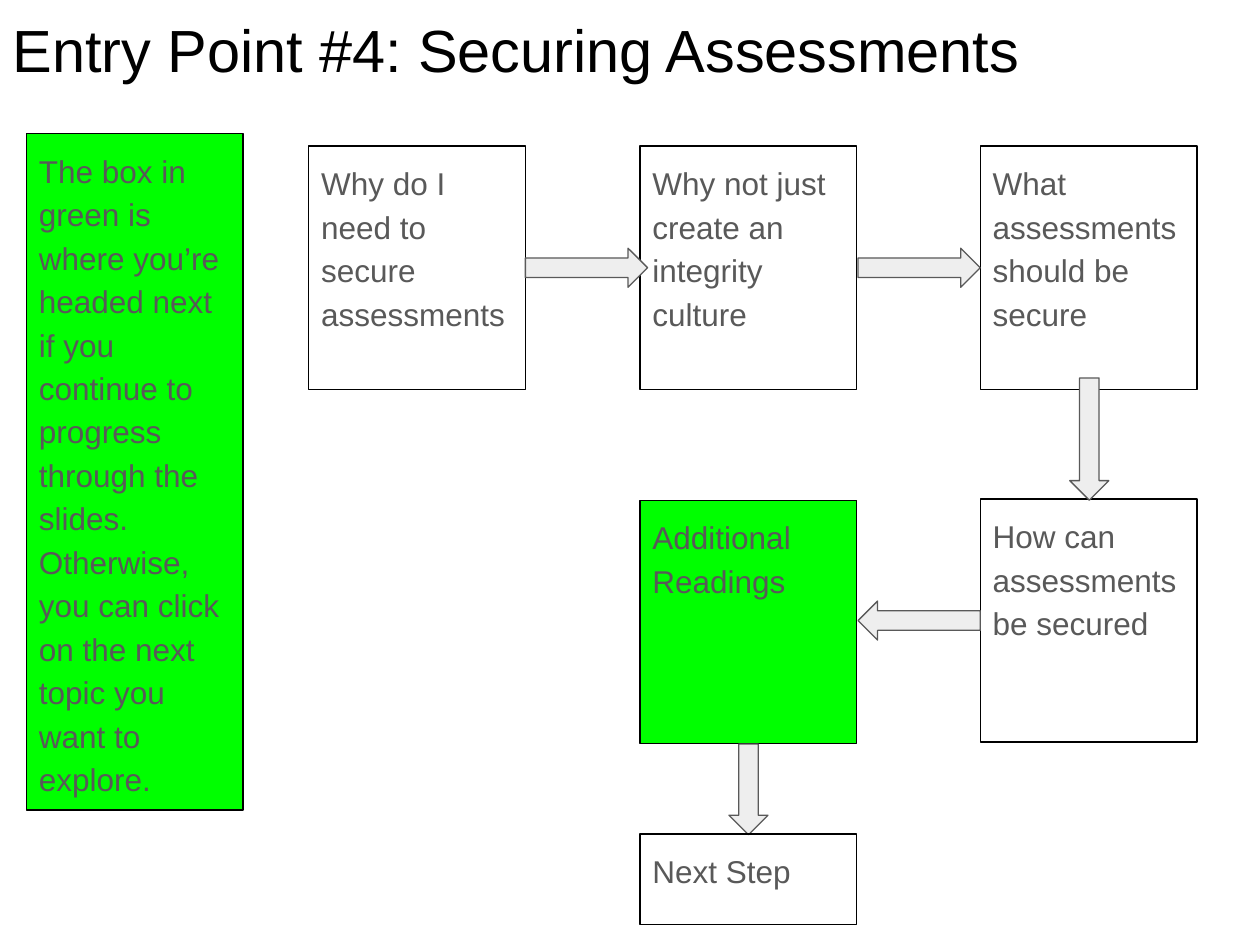
from dataclasses import dataclass

from pptx import Presentation
from pptx.dml.color import RGBColor
from pptx.enum.shapes import MSO_SHAPE
from pptx.enum.text import MSO_ANCHOR, PP_ALIGN
from pptx.slide import Slide
from pptx.util import Pt

PX = 9144  # EMU per px, 100 px to the inch
RECTANGLE, RIGHT_ARROW = MSO_SHAPE.RECTANGLE, MSO_SHAPE.RIGHT_ARROW
TOP, LEFT = MSO_ANCHOR.TOP, PP_ALIGN.LEFT

BLACK = RGBColor(0x00, 0x00, 0x00)
GREY = RGBColor(0x59, 0x59, 0x59)
PALE_GREY = RGBColor(0xEE, 0xEE, 0xEE)
GREEN = RGBColor(0x00, 0xFF, 0x00)

BOX_WIDTH, BOX_HEIGHT = 172, 193
ARROW_LENGTH, ARROW_THICKNESS = 97, 31
COLUMNS = (245, 508, 778)
ROWS = (116, 397, 662)
RIGHTWARD, DOWNWARD, LEFTWARD = 0, 90, 180


@dataclass
class FlowSlide:
    slide: Slide
    font: str = "Arial"
    inset: int = 10

    def set_text(self, shape, text, size, color):
        frame = shape.text_frame
        frame.word_wrap = True
        frame.vertical_anchor = TOP
        frame.margin_left = frame.margin_right = self.inset * PX
        frame.margin_top = frame.margin_bottom = self.inset * PX
        frame.text = text
        paragraph = frame.paragraphs[0]
        paragraph.alignment = LEFT
        font = paragraph.runs[0].font
        font.name, font.size = self.font, Pt(size)
        font.color.rgb = color
        return paragraph

    def outlined(self, kind, left, top, width, height, fill, line):
        shape = self.slide.shapes.add_shape(
            kind, left * PX, top * PX, width * PX, height * PX)
        shape.shadow.inherit = False
        if fill is None:
            shape.fill.background()
        else:
            shape.fill.solid()
            shape.fill.fore_color.rgb = fill
        shape.line.color.rgb = line
        shape.line.width = Pt(0.75)
        return shape

    def title(self, text, left, top, width, height):
        box = self.slide.shapes.add_textbox(
            left * PX, top * PX, width * PX, height * PX)
        self.set_text(box, text, 34, BLACK)

    def box(self, text, left, top, height=BOX_HEIGHT, fill=None):
        shape = self.outlined(
            RECTANGLE, left, top, BOX_WIDTH, height, fill, BLACK)
        paragraph = self.set_text(shape, text, 18, GREY)
        paragraph.line_spacing = 1.15
        paragraph.space_after = Pt(12)

    def arrow(self, center_x, center_y, direction, length=ARROW_LENGTH):
        shape = self.outlined(
            RIGHT_ARROW, center_x - length // 2,
            center_y - ARROW_THICKNESS // 2,
            length, ARROW_THICKNESS, PALE_GREY, GREY)
        shape.rotation = direction


def main():
    presentation = Presentation()
    presentation.slide_width, presentation.slide_height = 1000 * PX, 750 * PX
    flow = FlowSlide(
        presentation.slides.add_slide(presentation.slide_layouts[6]))

    first, second, third = COLUMNS
    upper, lower, last = ROWS
    flow.box("Why not just create an integrity culture", second, upper)
    flow.box("What assessments should be secure", third, upper)
    flow.box("Additional Readings", second, lower, fill=GREEN)
    flow.box("How can assessments be secured", third, lower - 1)
    flow.box("Why do I need to secure assessments", first, upper)

    upper_middle, lower_middle = (
        row + BOX_HEIGHT // 2 for row in (upper, lower))
    second_center, third_center = (
        column + BOX_WIDTH // 2 for column in (second, third))
    between_columns = (second + BOX_WIDTH + third) // 2
    flow.arrow(first + BOX_WIDTH + ARROW_LENGTH // 2, upper_middle, RIGHTWARD)
    flow.arrow(between_columns, upper_middle, RIGHTWARD)
    flow.arrow(third_center, lower - ARROW_LENGTH // 2 - 1, DOWNWARD)
    flow.arrow(between_columns, lower_middle - 1, LEFTWARD)

    flow.title("Entry Point #4: Securing Assessments", 0, 0, 975, 77)
    flow.box(
        "The box in green is where you’re headed next if you continue to "
        "progress through the slides. Otherwise, you can click on the next "
        "topic you want to explore.", 21, 106, height=537, fill=GREEN)

    next_gap = last - lower - BOX_HEIGHT
    flow.arrow(second_center, last - next_gap // 2, DOWNWARD, length=next_gap)
    flow.box("Next Step", second, last, height=72)

    presentation.save("out.pptx")


if __name__ == "__main__":
    main()
